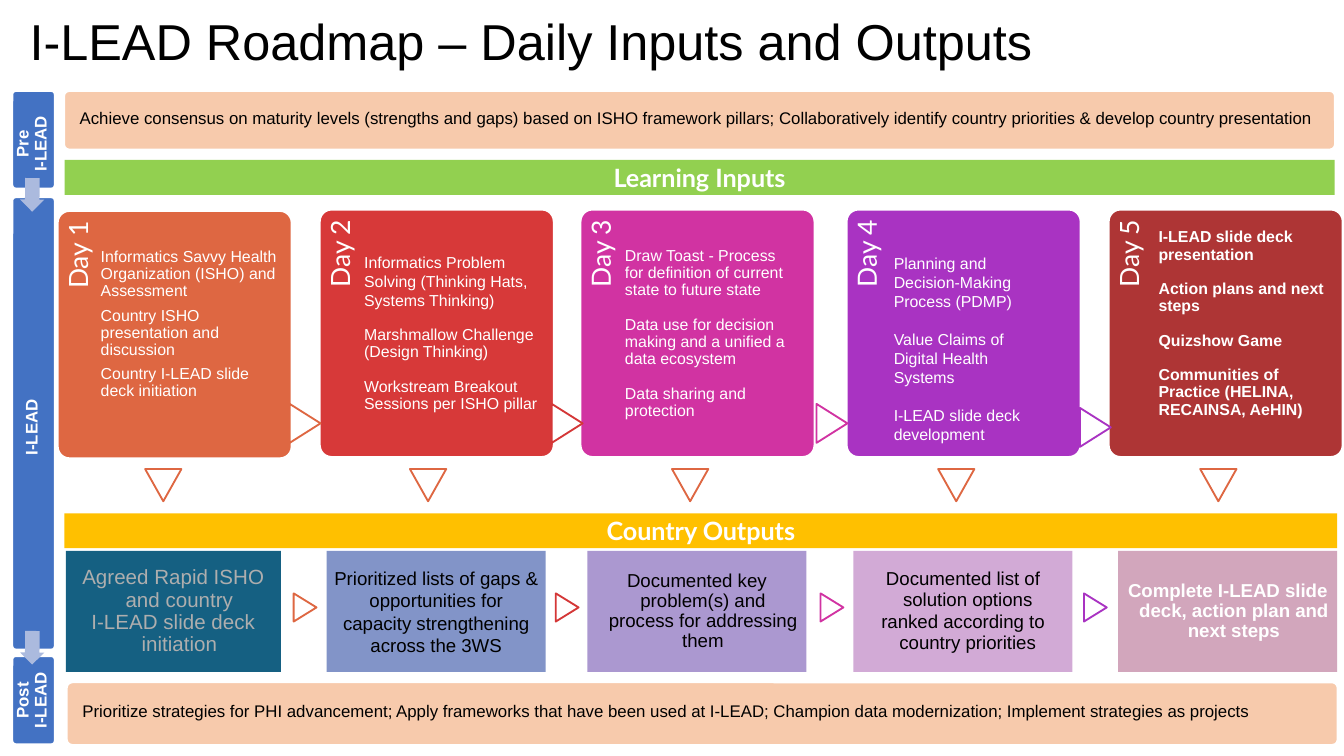
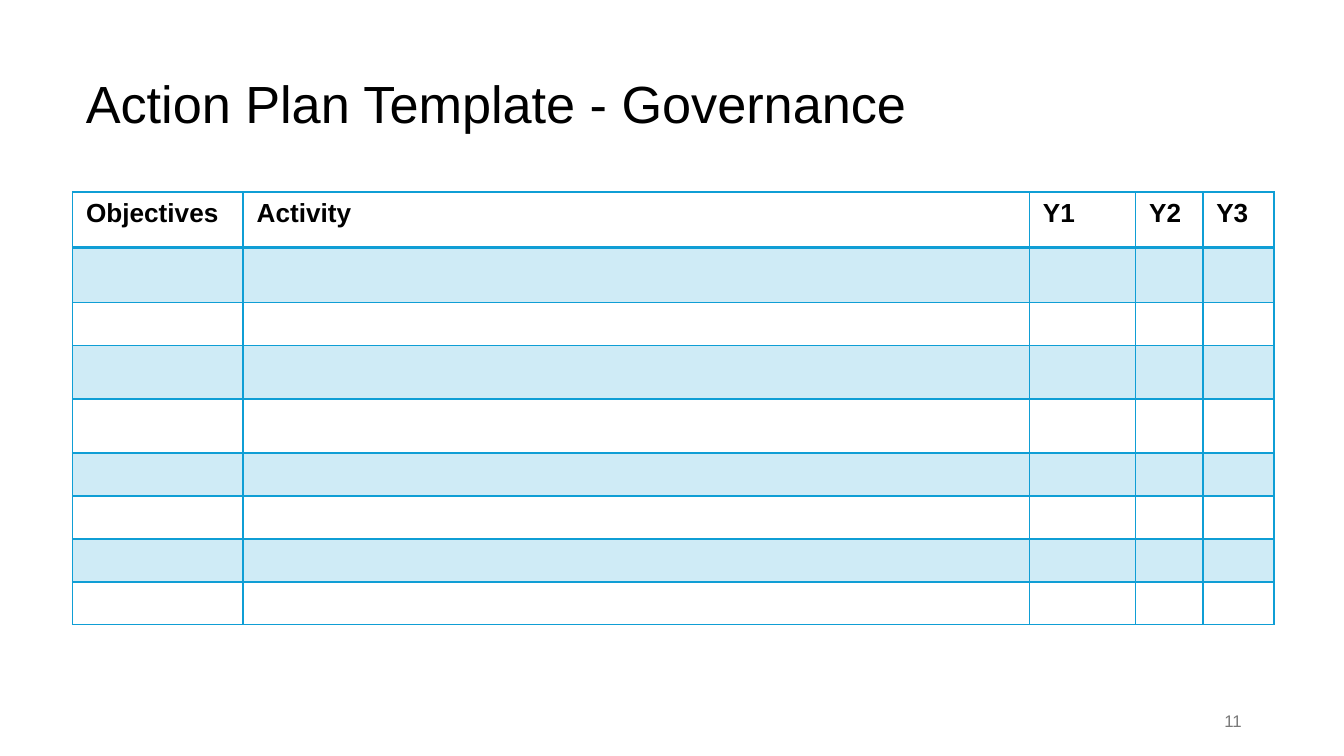
from lxml import etree
from pptx import Presentation
from pptx.dml.color import RGBColor
from pptx.enum.shapes import MSO_SHAPE
from pptx.enum.text import MSO_ANCHOR, PP_ALIGN
from pptx.oxml.ns import qn
from pptx.util import Inches, Pt

RECTANGLE, ROUNDED = MSO_SHAPE.RECTANGLE, MSO_SHAPE.ROUNDED_RECTANGLE
TRIANGLE, ARROW = MSO_SHAPE.FLOWCHART_EXTRACT, MSO_SHAPE.RIGHT_ARROW
LEFT, CENTER, RIGHT = PP_ALIGN.LEFT, PP_ALIGN.CENTER, PP_ALIGN.RIGHT
TOP, MIDDLE = MSO_ANCHOR.TOP, MSO_ANCHOR.MIDDLE

WHITE, BLACK = "FFFFFF", "000000"
BLUE, PALE_BLUE, PEACH, ORANGE = "4372C3", "ABBADE", "F7CAAC", "DE6742"
TABLE_BLUE, GREY = "0F9ED5", "797979"
BODY_FONT, LABEL_FONT = "Arial", "Lato"

# Roadmap: box is the text area of a card, spacing is (line spacing, space before),
# arrow is the left edge of the triangle below the card
DAYS = [
    {"name": "Day 1", "center": (1.3, 2.49), "color": ORANGE, "arrow": 1.08,
     "box": (0.75, 1.52, 1.33, 1.93), "bottom": 0.18, "spacing": (0.9, 3.9),
     "inputs": ["Informatics Savvy Health Organization (ISHO) and Assessment",
                "Country ISHO presentation and discussion",
                "Country I-LEAD slide deck initiation"]},
    {"name": "Day 2", "center": (3.25, 2.48), "color": "D73939", "arrow": 3.05,
     "box": (2.71, 1.52, 1.3, 1.87), "spacing": (0.9, 9.3), "first_spacing": 1,
     "inputs": ["Informatics Problem Solving (Thinking Hats, Systems Thinking)",
                "Marshmallow Challenge (Design Thinking)",
                "Workstream Breakout Sessions per ISHO pillar"]},
    {"name": "Day 3", "center": (5.19, 2.48), "color": "D133A2", "arrow": 5,
     "box": (4.65, 1.5, 1.25, 1.93), "spacing": (0.9, 9.3),
     "inputs": ["Draw Toast - Process for definition of current state to future state",
                "Data use for decision making and a unified a data ecosystem",
                "Data sharing and protection"]},
    {"name": "Day 4", "center": (7.17, 2.48), "color": "A933C2", "arrow": 6.98,
     "box": (6.65, 1.85, 1.18, 1.45), "spacing": (1, 10),
     "inputs": ["Planning and Decision-Making Process (PDMP)",
                "Value Claims of Digital Health Systems",
                "I-LEAD slide deck development"]},
    {"name": "Day 5", "center": (9.12, 2.48), "color": "AE3535", "arrow": 8.93,
     "box": (8.62, 1.47, 1.31, 1.96), "bottom": 0.12, "spacing": (0.9, 9.3), "bold": True,
     "inputs": ["I-LEAD slide deck presentation", "Action plans and next steps",
                "Quizshow Game", "Communities of Practice (HELINA, RECAINSA, AeHIN)"]},
]
OUTPUTS = [
    {"left": 0.49, "width": 1.6, "fill": "156082", "color": "AEAEAE", "size": 11,
     "hanging": 0.09,
     "text": ["Agreed Rapid ISHO and country", "I-LEAD slide deck initiation"]},
    {"left": 2.43, "fill": "8294C8", "line_spacing": 1,
     "text": ["Prioritized lists of gaps & opportunities for capacity strengthening "
              "across the 3WS"]},
    {"left": 4.37, "fill": "AB98D0", "hanging": 0.09,
     "text": ["Documented key problem(s) and process for addressing them"]},
    {"left": 6.35, "fill": "D2AAD6", "hanging": 0.07, "before": 1.3,
     "text": ["Documented list of solution options", "ranked according to country priorities"]},
    {"left": 8.32, "fill": "D2A6BC", "color": WHITE, "bold": True, "hanging": 0.09,
     "text": ["Complete I-LEAD slide deck, action plan and next steps"]},
]
# Arrows between days: centre x, centre y at the cards, colour
NEXT_DAY = [(2.27, 3.15, ORANGE), (4.22, 3.15, "D43737"),
            (6.19, 3.15, "D133A2"), (8.15, 3.18, "A933C2")]
HEADINGS = [("Learning Inputs", (0.48, 1.19, 9.45, 0.26), "92D050"),
            ("Country Outputs", (0.48, 3.82, 9.47, 0.26), "FFC000")]
OUTER_PHASES = [
    ("Achieve consensus on maturity levels (strengths and gaps) based on ISHO framework "
     "pillars; Collaboratively identify country priorities & develop country presentation",
     (0.47, 0.67, 9.47, 0.45)),
    ("Prioritize strategies for PHI advancement; Apply frameworks that have been used at "
     "I-LEAD; Champion data modernization; Implement strategies as projects",
     (0.49, 5.07, 9.47, 0.48)),
]
# Phase bar: lines, centre y, length, inset at the upper end
PHASES = [(["Pre", "I-LEAD"], 1.04, 0.74, 0.08), (["I-LEAD"], 3.15, 3.38, 0.08),
          (["Post", "I-LEAD"], 5.21, 0.67, 0.02)]
PHASE_ARROW_CENTERS = [1.45, 4.82]

# Action plan
PLAN_COLUMNS = [("Objectives", 1.27), ("Activity", 5.85), ("Y1", 0.79), ("Y2", 0.5), ("Y3", 0.53)]
PLAN_ROWS = [0.41, 0.41, 0.32, 0.4, 0.4, 0.32, 0.32, 0.32, 0.32]


def rgb(color):
    return RGBColor.from_string(color)


def around(x, y, width, height):
    """Box of the given size centred on a point."""
    return x - width / 2, y - height / 2, width, height


def write(shape, paragraphs, size, color=BLACK, font=BODY_FONT, bold=False, align=LEFT,
          anchor=MIDDLE, insets=(0.07, 0.04, 0.07, 0.04), line_spacing=0.9,
          first_spacing=None, before=0, hanging=0):
    frame = shape.text_frame
    frame.word_wrap = True
    frame.vertical_anchor = anchor
    frame.margin_left, frame.margin_top, frame.margin_right, frame.margin_bottom = map(
        Inches, insets)
    for index, text in enumerate(paragraphs):
        paragraph = frame.add_paragraph() if index else frame.paragraphs[0]
        paragraph.alignment = align
        paragraph.line_spacing = line_spacing if index else first_spacing or line_spacing
        if index and before:
            paragraph.space_before = Pt(before)
        if hanging:
            properties = paragraph._p.get_or_add_pPr()
            properties.set("marL", str(Inches(hanging)))
            properties.set("indent", str(-Inches(hanging)))
        run = paragraph.add_run()
        run.text = text
        run.font.name, run.font.size, run.font.bold = font, Pt(size), bold
        run.font.color.rgb = rgb(color)


def add_text(slide, box, paragraphs, size, **style):
    write(slide.shapes.add_textbox(*map(Inches, box)), paragraphs, size, **style)


def add_shape(slide, kind, box, fill, line=None, line_width=1, rotation=0, adjustments=()):
    shape = slide.shapes.add_shape(kind, *map(Inches, box))
    shape.shadow.inherit = False
    shape.rotation = rotation
    shape.fill.solid()
    shape.fill.fore_color.rgb = rgb(fill)
    if line:
        shape.line.color.rgb = rgb(line)
        shape.line.width = Pt(line_width)
    else:
        shape.line.fill.background()
    for index, value in enumerate(adjustments):
        shape.adjustments[index] = value
    return shape


def add_day(slide, day):
    card = add_shape(slide, ROUNDED, around(*day["center"], 1.84, 1.74), day["color"], WHITE,
                     rotation=270, adjustments=[0.05])
    write(card, [day["name"]], 14.2, WHITE, LABEL_FONT, align=RIGHT, anchor=TOP,
          insets=(0.05, 0.03, 0.05, 0.05))
    line_spacing, before = day["spacing"]
    add_text(slide, day["box"], day["inputs"], 8.5, color=WHITE, bold=day.get("bold", False),
             insets=(0, 0.04, 0, day.get("bottom", 0)), line_spacing=line_spacing,
             first_spacing=day.get("first_spacing"), before=before)
    add_shape(slide, TRIANGLE, (day["arrow"], 3.49, 0.27, 0.24), WHITE, ORANGE, rotation=180)


def add_output(slide, output):
    box = (output["left"], 4.1, output.get("width", 1.63), 0.9)
    write(add_shape(slide, RECTANGLE, box, output["fill"]), output["text"],
          output.get("size", 10), output.get("color", BLACK), bold=output.get("bold", False),
          align=CENTER, insets=(0.05,) * 4, line_spacing=output.get("line_spacing", 0.9),
          before=output.get("before", 0), hanging=output.get("hanging", 0))


def build_roadmap(slide):
    for output in OUTPUTS:
        add_output(slide, output)
    for day in DAYS:
        add_day(slide, day)
    for x, y, color in NEXT_DAY:
        add_shape(slide, TRIANGLE, around(x, y, 0.29, 0.23), WHITE, color, rotation=90)
        add_shape(slide, TRIANGLE, around(x, 4.52, 0.21, 0.17), WHITE, color, rotation=90)
    for text, box, fill in HEADINGS:
        write(add_shape(slide, RECTANGLE, box, fill), [text], 13.5, WHITE, LABEL_FONT,
              bold=True, align=CENTER, line_spacing=1)
    add_text(slide, (0.15, 0.11, 8.92, 0.47), ["I-LEAD Roadmap – Daily Inputs and Outputs"], 27,
             line_spacing=0.8)
    for text, box in OUTER_PHASES:
        band = add_shape(slide, ROUNDED, box, PEACH, WHITE, 2, adjustments=[0.1])
        write(band, [text], 9, insets=(0.11, 0.05, 0.05, 0.07))
    for lines, y, length, upper_inset in PHASES:
        bar = add_shape(slide, ROUNDED, around(0.25, y, length, 0.33), BLUE, WHITE, 2,
                        rotation=270, adjustments=[0.1])
        write(bar, lines, 9, WHITE, bold=True, align=CENTER,
              insets=(0.02, 0.02, upper_inset, 0.04))
    for y in PHASE_ARROW_CENTERS:
        add_shape(slide, ARROW, around(0.24, y, 0.25, 0.18), PALE_BLUE, rotation=90.6,
                  adjustments=[0.6, 0.5])


def set_borders(cell, widths):
    """Draw the left, right, top and bottom borders, with widths in points."""
    properties = cell._tc.get_or_add_tcPr()
    for index, (side, width) in enumerate(zip("LRTB", widths)):
        line = etree.Element(qn(f"a:ln{side}"), w=str(Pt(width)))
        fill = etree.SubElement(line, qn("a:solidFill"))
        etree.SubElement(fill, qn("a:srgbClr"), val=TABLE_BLUE)
        properties.insert(index, line)


def fill_cell(cell, banded):
    cell.fill.solid()
    cell.fill.fore_color.rgb = rgb(TABLE_BLUE if banded else WHITE)
    if banded:
        color = cell._tc.tcPr.find(".//" + qn("a:srgbClr"))
        etree.SubElement(color, qn("a:alpha"), val="20000")


def build_action_plan(slide):
    add_text(slide, (7.06, 5.21, 2.25, 0.3), ["11"], 9, color=GREY, align=RIGHT, line_spacing=1)
    add_text(slide, (0.54, 0.15, 7.73, 1.28), ["Action Plan Template - Governance"], 28,
             insets=(0.1, 0.05, 0.1, 0.05))
    width = sum(column_width for _, column_width in PLAN_COLUMNS)
    frame = slide.shapes.add_table(len(PLAN_ROWS), len(PLAN_COLUMNS),
                                   *map(Inches, (0.54, 1.43, width, sum(PLAN_ROWS))))
    table = frame.table
    table.first_row = table.horz_banding = False
    for column, (_, column_width) in zip(table.columns, PLAN_COLUMNS):
        column.width = Inches(column_width)
    for row_index, height in enumerate(PLAN_ROWS):
        table.rows[row_index].height = Inches(height)
        for column_index, (heading, _) in enumerate(PLAN_COLUMNS):
            cell = table.cell(row_index, column_index)
            fill_cell(cell, row_index % 2 == 1)
            set_borders(cell, (1, 1, 2 if row_index == 1 else 1, 2 if row_index == 0 else 1))
            paragraph = cell.text_frame.paragraphs[0]
            if row_index:
                etree.SubElement(paragraph._p, qn("a:endParaRPr"), sz="1000")
                continue
            run = paragraph.add_run()
            run.text = heading
            run.font.name, run.font.size, run.font.bold = BODY_FONT, Pt(14), True
            run.font.color.rgb = rgb(BLACK)


def main():
    presentation = Presentation()
    presentation.slide_width = Inches(10)
    presentation.slide_height = Inches(10 * 9 / 16)
    for build in (build_roadmap, build_action_plan):
        build(presentation.slides.add_slide(presentation.slide_layouts[6]))
    presentation.save("out.pptx")


if __name__ == "__main__":
    main()
